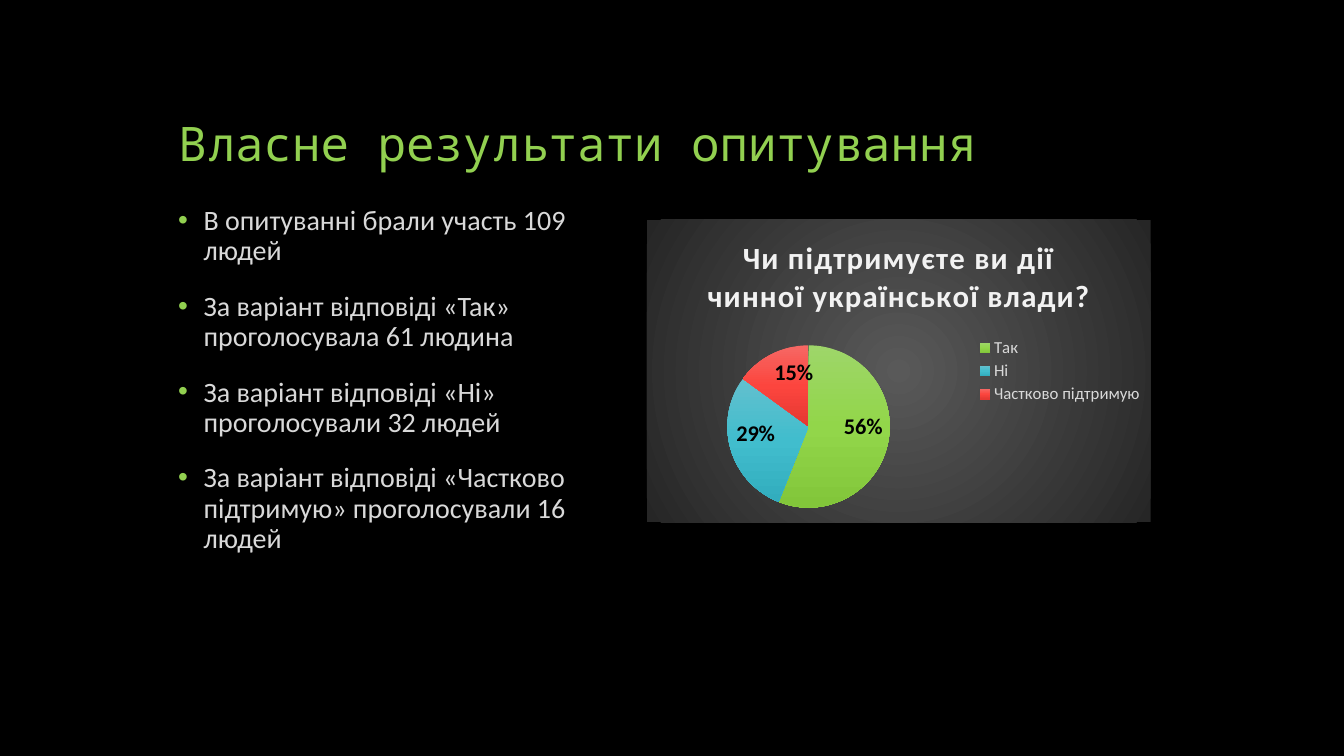
from lxml.etree import SubElement
from pptx import Presentation
from pptx.chart.data import CategoryChartData
from pptx.dml.color import RGBColor
from pptx.enum.chart import XL_CHART_TYPE, XL_LABEL_POSITION, XL_LEGEND_POSITION
from pptx.enum.text import MSO_ANCHOR
from pptx.oxml import parse_xml
from pptx.oxml.ns import nsdecls, qn
from pptx.util import Cm, Pt

TITLE = "Власне результати опитування"
FINDINGS = [
    "В опитуванні брали участь 109 людей",
    "За варіант відповіді «Так» проголосувала 61 людина",
    "За варіант відповіді «Ні» проголосували 32 людей",
    "За варіант відповіді «Частково підтримую» проголосували 16 людей",
]
QUESTION = "Чи підтримуєте ви дії чинної української влади?"
ANSWERS = {"Так": 56, "Ні": 29, "Частково підтримую": 15}

THEME = {
    "heading_font": "Noto Sans Mono", "body_font": "Calibri",
    "back": "000000", "accent": "92D050", "text": "D9D9D9",
    "question": "F2F2F2", "label": "000000",
    "title_pt": 34, "body_pt": 20, "question_pt": 22, "label_pt": 16, "legend_pt": 12,
    "panel": ["595959", "262626"],
    "slices": [
        ["9ED669", "92D64A", "82C63A"],
        ["63C0CE", "41BDCD", "32ADBE"],
        ["F66864", "FC453E", "E53832"],
    ],
}

LEFT = 4.24
TITLE_BOX = (LEFT, 1.27, 25.4, 3.18)
BODY_BOX = (LEFT, 5.08, 12.07, 11.86)
CHART_BOX = (16.3, 5.54, 12.7, 7.62)
PLOT_LAYOUT = (0.16, 0.415, 0.322, 0.537)
LEGEND_LAYOUT = (0.65, 0.38, 0.34, 0.24)


def style_font(font, size, color, name=THEME["body_font"], bold=False):
    font.name, font.size, font.bold = name, Pt(size), bold
    font.color.rgb = RGBColor.from_string(color)


def write(p, text, spacing=0, **fmt):
    r = p.add_run()
    r.text = text
    style_font(r.font, **fmt)
    if spacing:
        r.font._element.set("spc", str(spacing * 100))


def add_text_frame(s, box):
    tf = s.shapes.add_textbox(*map(Cm, box)).text_frame
    tf.word_wrap = True
    return tf


def add_bullet(p, color):
    pPr = p._p.get_or_add_pPr()
    pPr.set("marL", str(Cm(0.64)))
    pPr.set("indent", str(-Cm(0.64)))
    clr = SubElement(pPr, qn("a:buClr"))
    SubElement(clr, qn("a:srgbClr"), val=color)
    SubElement(pPr, qn("a:buFont"), typeface="Arial")
    SubElement(pPr, qn("a:buChar"), char="•")


def gradient(colors, direction):
    step = 100000 // (len(colors) - 1)
    stops = "".join(
        f'<a:gs pos="{i * step}"><a:srgbClr val="{c}"/></a:gs>' for i, c in enumerate(colors)
    )
    return parse_xml(
        f'<a:gradFill {nsdecls("a")}><a:gsLst>{stops}</a:gsLst>{direction}</a:gradFill>'
    )


def set_layout(element, box, inner=False):
    for old in element.findall(qn("c:layout")):
        element.remove(old)
    target = '<c:layoutTarget val="inner"/>' if inner else ""
    modes = '<c:xMode val="edge"/><c:yMode val="edge"/>'
    sizes = "".join(f'<c:{k} val="{v}"/>' for k, v in zip("xywh", box))
    layout = parse_xml(
        f'<c:layout {nsdecls("c")}><c:manualLayout>{target}{modes}{sizes}'
        "</c:manualLayout></c:layout>"
    )
    element.insert(0 if inner else 1, layout)


def add_survey_chart(s):
    data = CategoryChartData()
    data.categories = list(ANSWERS)
    data.add_series("Series 1", list(ANSWERS.values()))
    chart = s.shapes.add_chart(XL_CHART_TYPE.PIE, *map(Cm, CHART_BOX), data).chart
    style_font(chart.font, THEME["legend_pt"], THEME["text"])

    chart.has_title = True
    write(chart.chart_title.text_frame.paragraphs[0], QUESTION, spacing=1,
          size=THEME["question_pt"], color=THEME["question"], bold=True)
    chart.chart_title.include_in_layout = False

    chart.has_legend = True
    chart.legend.position = XL_LEGEND_POSITION.RIGHT
    chart.legend.include_in_layout = False
    style_font(chart.legend.font, THEME["legend_pt"], THEME["text"])

    plot = chart.plots[0]
    plot.vary_by_categories = True
    plot.has_data_labels = True
    labels = plot.data_labels
    labels.show_percentage, labels.show_value = True, False
    labels.number_format, labels.number_format_is_linked = "0%", False
    labels.position = XL_LABEL_POSITION.INSIDE_END
    style_font(labels.font, THEME["label_pt"], THEME["label"], bold=True)

    root = chart.element
    for i, colors in enumerate(THEME["slices"]):
        plot.series[0].points[i].format.fill.solid()
        spPr = root.xpath(".//c:dPt/c:spPr")[i]
        spPr.replace(spPr[0], gradient(colors, '<a:lin ang="5400000" scaled="0"/>'))

    set_layout(root.xpath(".//c:plotArea")[0], PLOT_LAYOUT, inner=True)
    set_layout(root.xpath(".//c:legend")[0], LEGEND_LAYOUT)

    panel = parse_xml(f'<c:spPr {nsdecls("c", "a")}><a:ln><a:noFill/></a:ln></c:spPr>')
    center = '<a:fillToRect l="50000" t="50000" r="50000" b="50000"/>'
    panel.insert(0, gradient(THEME["panel"], f'<a:path path="circle">{center}</a:path>'))
    root.find(qn("c:chart")).addnext(panel)


def main():
    prs = Presentation()
    prs.slide_width, prs.slide_height = Cm(33.87), Cm(19.05)
    s = prs.slides.add_slide(prs.slide_layouts[6])
    s.background.fill.solid()
    s.background.fill.fore_color.rgb = RGBColor.from_string(THEME["back"])

    tf = add_text_frame(s, TITLE_BOX)
    tf.vertical_anchor = MSO_ANCHOR.BOTTOM
    p = tf.paragraphs[0]
    p.line_spacing = 0.9
    write(p, TITLE, size=THEME["title_pt"], color=THEME["accent"], name=THEME["heading_font"])

    tf = add_text_frame(s, BODY_BOX)
    for i, finding in enumerate(FINDINGS):
        p = tf.add_paragraph() if i else tf.paragraphs[0]
        p.line_spacing, p.space_before = 0.9, Pt(18)
        add_bullet(p, THEME["accent"])
        write(p, finding, size=THEME["body_pt"], color=THEME["text"])

    add_survey_chart(s)
    prs.save("out.pptx")


if __name__ == "__main__":
    main()
